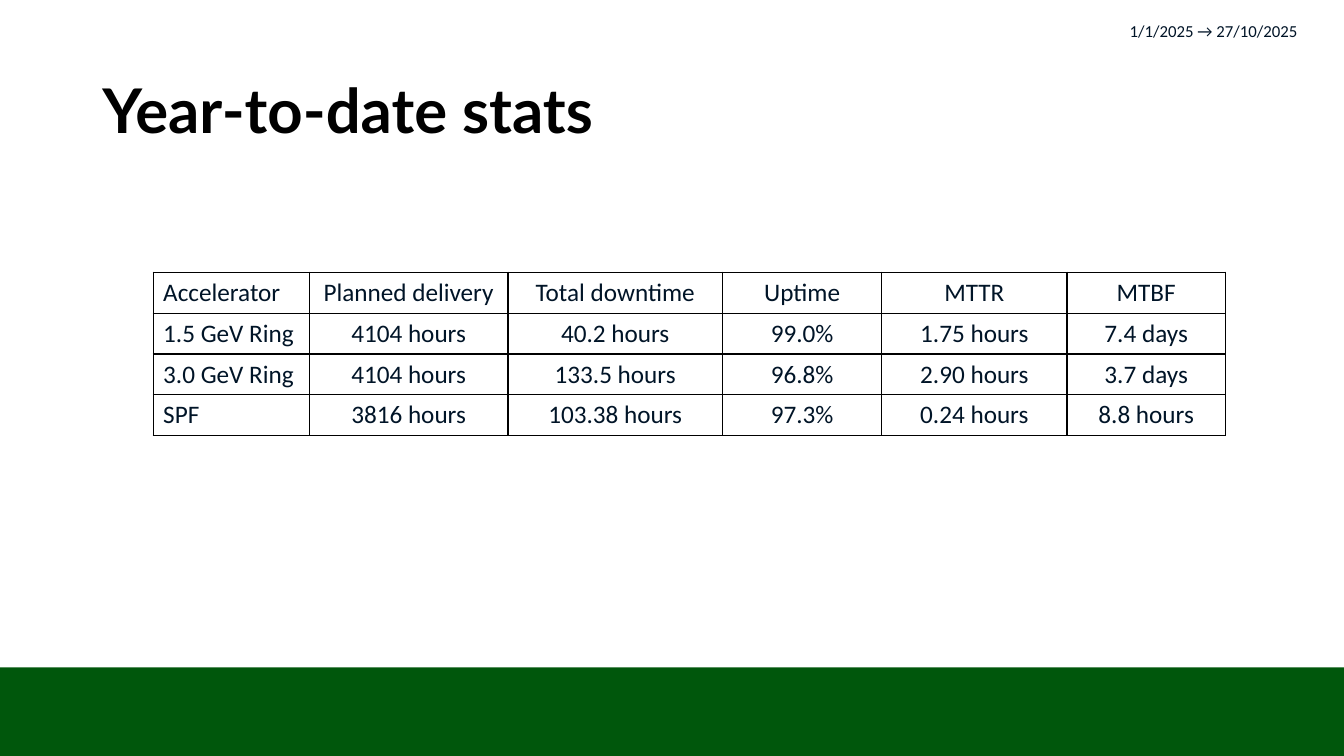
from lxml import etree
from pptx import Presentation
from pptx.dml.color import RGBColor
from pptx.enum.shapes import MSO_SHAPE
from pptx.enum.text import MSO_ANCHOR, PP_ALIGN
from pptx.oxml.ns import qn
from pptx.util import Cm, Pt

RECTANGLE = MSO_SHAPE.RECTANGLE
TOP, MIDDLE = MSO_ANCHOR.TOP, MSO_ANCHOR.MIDDLE
LEFT, CENTER = PP_ALIGN.LEFT, PP_ALIGN.CENTER

COLORS = {"footer": "00570C", "title": "000000", "body": "001427", "border": "000000"}

STATS = [
    ["Accelerator", "Planned delivery", "Total downtime", "Uptime", "MTTR", "MTBF"],
    ["1.5 GeV Ring", "4104 hours", "40.2 hours", "99.0%", "1.75 hours", "7.4 days"],
    ["3.0 GeV Ring", "4104 hours", "133.5 hours", "96.8%", "2.90 hours", "3.7 days"],
    ["SPF", "3816 hours", "103.38 hours", "97.3%", "0.24 hours", "8.8 hours"],
]
COLUMN_WIDTHS = [3.94, 5.0, 5.41, 4.01, 4.67, 3.99]
ROW_HEIGHT = 1.03


def style_paragraph(paragraph, font_name, size, color, bold=False):
    font = paragraph.font
    font.name, font.size, font.bold = font_name, Pt(size), bold
    font.color.rgb = RGBColor.from_string(COLORS[color])


def add_band(slide, left, top, width, height, color):
    band = slide.shapes.add_shape(RECTANGLE, Cm(left), Cm(top), Cm(width), Cm(height))
    band.shadow.inherit = False
    band.fill.solid()
    band.fill.fore_color.rgb = RGBColor.from_string(COLORS[color])
    band.line.fill.background()


def add_text(slide, text, left, top, width, height, anchor=TOP):
    frame = slide.shapes.add_textbox(Cm(left), Cm(top), Cm(width), Cm(height)).text_frame
    frame.word_wrap = True
    frame.vertical_anchor = anchor
    frame.text = text
    return frame.paragraphs[0]


def add_borders(cell, color):
    properties = cell._tc.get_or_add_tcPr()
    for side in ("a:lnL", "a:lnR", "a:lnT", "a:lnB"):
        line = etree.SubElement(properties, qn(side), w=str(Pt(1)))
        fill = etree.SubElement(line, qn("a:solidFill"))
        etree.SubElement(fill, qn("a:srgbClr"), val=COLORS[color])


def add_stats_table(slide, left, top):
    table = slide.shapes.add_table(
        len(STATS), len(COLUMN_WIDTHS), Cm(left), Cm(top),
        Cm(sum(COLUMN_WIDTHS)), Cm(ROW_HEIGHT * len(STATS)),
    ).table
    table.first_row = table.horz_banding = False
    for column, width in zip(table.columns, COLUMN_WIDTHS):
        column.width = Cm(width)
    for row, values in zip(table.rows, STATS):
        row.height = Cm(ROW_HEIGHT)
        for index, (cell, value) in enumerate(zip(row.cells, values)):
            add_borders(cell, "border")
            cell.fill.background()
            cell.vertical_anchor = MIDDLE
            cell.text = value
            paragraph = cell.text_frame.paragraphs[0]
            paragraph.alignment = CENTER if index else LEFT
            style_paragraph(paragraph, "Calibri", 18, "body")


def main():
    presentation = Presentation()
    presentation.slide_width, presentation.slide_height = Cm(33.87), Cm(19.05)
    slide = presentation.slides.add_slide(presentation.slide_layouts[6])

    # Footer band
    add_band(slide, 0, 16.82, 33.87, 2.23, "footer")

    # Title
    title = add_text(slide, "Year-to-date stats", 2.33, 1.01, 29.21, 3.68, MIDDLE)
    title.line_spacing = 0.9
    style_paragraph(title, "Lato", 44, "title", bold=True)

    # Statistics per accelerator
    add_stats_table(slide, 3.86, 6.86)

    # Reporting period
    period = add_text(slide, "1/1/2025 → 27/10/2025", 28.22, 0.41, 5.21, 0.77)
    style_paragraph(period, "Calibri", 12, "body")

    presentation.save("out.pptx")


if __name__ == "__main__":
    main()
